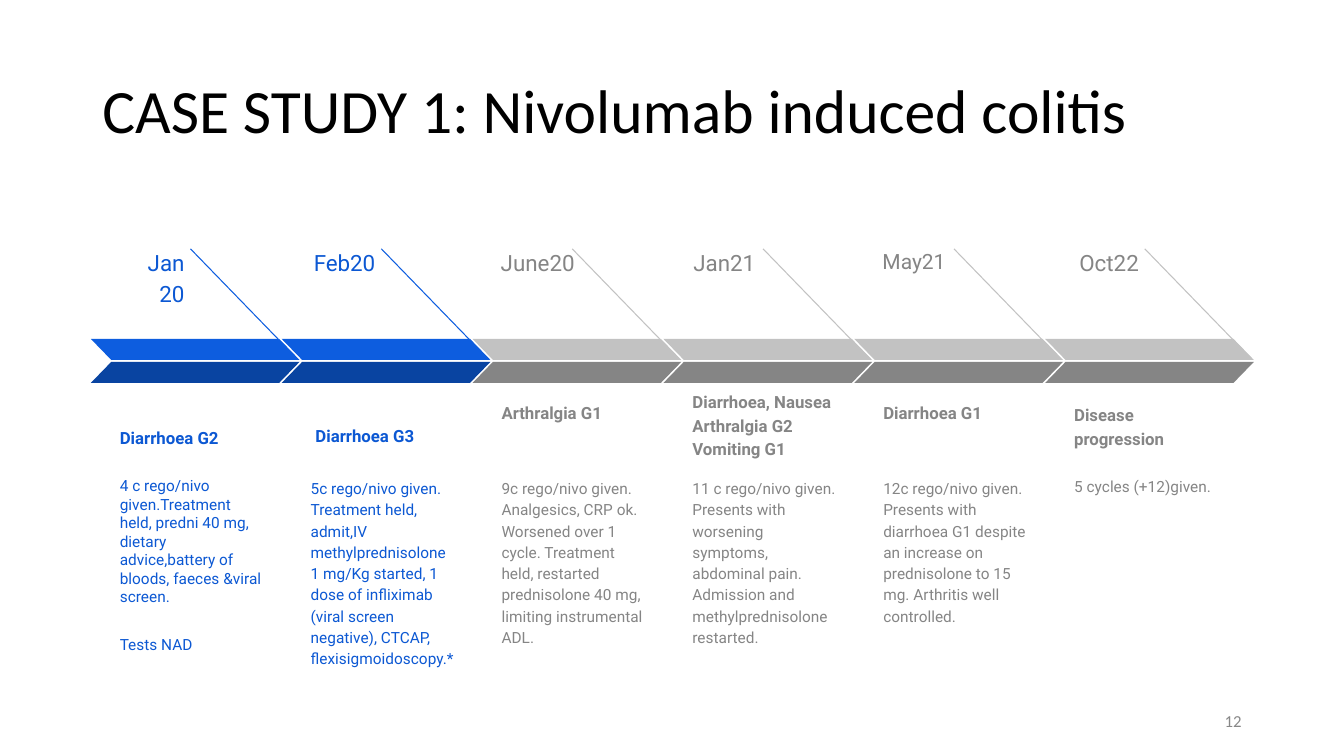
"""Build a six-step timeline slide of a colitis case study."""
from dataclasses import dataclass
from lxml.etree import SubElement
from pptx import Presentation
from pptx.dml.color import RGBColor as Rgb
from pptx.enum.shapes import MSO_CONNECTOR as Link, MSO_SHAPE as Form
from pptx.enum.text import MSO_ANCHOR as Anchor, PP_ALIGN as Align
from pptx.oxml.ns import qn
from pptx.util import Cm, Pt


@dataclass(frozen=True)
class Theme:
    blue: tuple = ("0D5DDF", "0944A1", "0C58D3")
    grey: tuple = ("C2C2C2", "858585", "858585")
    black: str = "000000"
    page: str = "888888"
    main: str = "Calibri"
    step: str = "Roboto"
    title: int = 44
    date: int = 16
    small: int = 15
    head: int = 12
    body: int = 11


theme = Theme()


def write(shapes, text, box, size, color, font=theme.step, pad=0.33, lead=1.15,
          align=Align.LEFT, anchor=Anchor.TOP, bold=False):
    frame = shapes.add_textbox(*map(Cm, box)).text_frame
    frame.word_wrap = True
    frame.vertical_anchor = anchor
    frame.margin_left = frame.margin_right = Cm(pad)
    frame.margin_top = frame.margin_bottom = Cm(min(pad, 0.33) if pad > 0.3 else 0.13)
    frame.text = text
    for par in frame.paragraphs:
        par.alignment = align
        par.line_spacing = lead
        for run in par.runs:
            run.font.name = font
            run.font.size = Pt(size)
            run.font.bold = bold
            run.font.color.rgb = Rgb.from_string(color)
    return frame


deck = Presentation()
deck.slide_width, deck.slide_height = Cm(33.87), Cm(19.05)
slide = deck.slides.add_slide(deck.slide_layouts[6])

write(slide.shapes, "CASE STUDY 1: Nivolumab induced colitis", (2.33, 1.01, 29.21, 3.68),
      theme.title, theme.black, theme.main, 0.25, 0.9, anchor=Anchor.MIDDLE)

steps = [
    (theme.blue, "Jan 20", theme.date, Align.RIGHT, 2.31, "Diarrhoea G2", 0.4, 11.53, 1,
     "4 c rego/nivo given.Treatment held, predni 40 mg, dietary advice,"
     "battery of bloods, faeces &viral screen.\nTests NAD"),
    (theme.blue, "Feb20", theme.date, Align.RIGHT, 2.31, "Diarrhoea G3", 0.52, 11.53, 1.15,
     "5c rego/nivo given. Treatment held, admit,IV methylprednisolone 1 mg/Kg started, "
     "1 dose of infliximab (viral screen negative), CTCAP, flexisigmoidoscopy.*"),
    (theme.grey, "June20", theme.date, Align.LEFT, 2.67, "Arthralgia G1", 0.4, 10.95, 1.15,
     "9c rego/nivo given. Analgesics, CRP ok. Worsened over 1 cycle. Treatment held, "
     "restarted prednisolone 40 mg, limiting instrumental ADL."),
    (theme.grey, "Jan21", theme.date, Align.CENTER, 2.31,
     "Diarrhoea, Nausea Arthralgia G2 Vomiting G1", 0.4, 11.89, 1.15,
     "11 c rego/nivo given. Presents with worsening symptoms, abdominal pain. "
     "Admission and methylprednisolone restarted."),
    (theme.grey, "May21", theme.small, Align.LEFT, 2.31, "Diarrhoea G1", 0.4, 10.95, 1.15,
     "12c rego/nivo given. Presents with diarrhoea G1 despite an increase on "
     "prednisolone to 15 mg. Arthritis well controlled."),
    (theme.grey, "Oct22", theme.date, Align.RIGHT, 2.31, "Disease progression", 0.4, 11.63, 1.15,
     "5 cycles (+12)given."),
]
START, PITCH, TALL = 2.29, 4.81, 1.65

for index, (tones, date, size, align, width, head, shift, base, lead, body) in enumerate(steps):
    left = START + index * PITCH
    light, dark, ink = tones
    shapes = slide.shapes.add_group_shape().shapes

    line = shapes.add_connector(Link.STRAIGHT, Cm(left + 2.51), Cm(6.27), Cm(left + 5.18), Cm(9.02))
    line.line.color.rgb = Rgb.from_string(light)
    line.line.width = Pt(0.75)
    SubElement(line._element.spPr, qn("a:effectLst"))

    for top, tone in ((8.54, light), (9.12, dark)):
        bar = shapes.add_shape(Form.PARALLELOGRAM, Cm(left), Cm(top), Cm(5.26), Cm(0.53))
        bar.adjustments[0] = 0.97
        bar.shadow.inherit = False
        bar.fill.solid()
        bar.fill.fore_color.rgb = Rgb.from_string(tone)
        bar.line.fill.background()
        if tone == light:
            bar._element.spPr.xfrm.set("flipH", "1")

    write(shapes, head, (left + shift, base - TALL, 4.32, TALL), theme.head, ink,
          lead=lead, anchor=Anchor.BOTTOM, bold=True)
    notes = write(shapes, body, (left + 0.4, 11.68, 4.32, 5.16), theme.body, ink, lead=lead)
    for par in notes.paragraphs[1:]:
        par.space_before = Pt(21)
    write(shapes, date, (left + 0.38, 5.84, width, 0.89), size, ink, align=align)

write(slide.shapes, "12", (23.92, 17.66, 7.62, 1.01), theme.head, theme.page,
      theme.main, 0.25, 1, Align.RIGHT, Anchor.MIDDLE)

deck.save("out.pptx")
